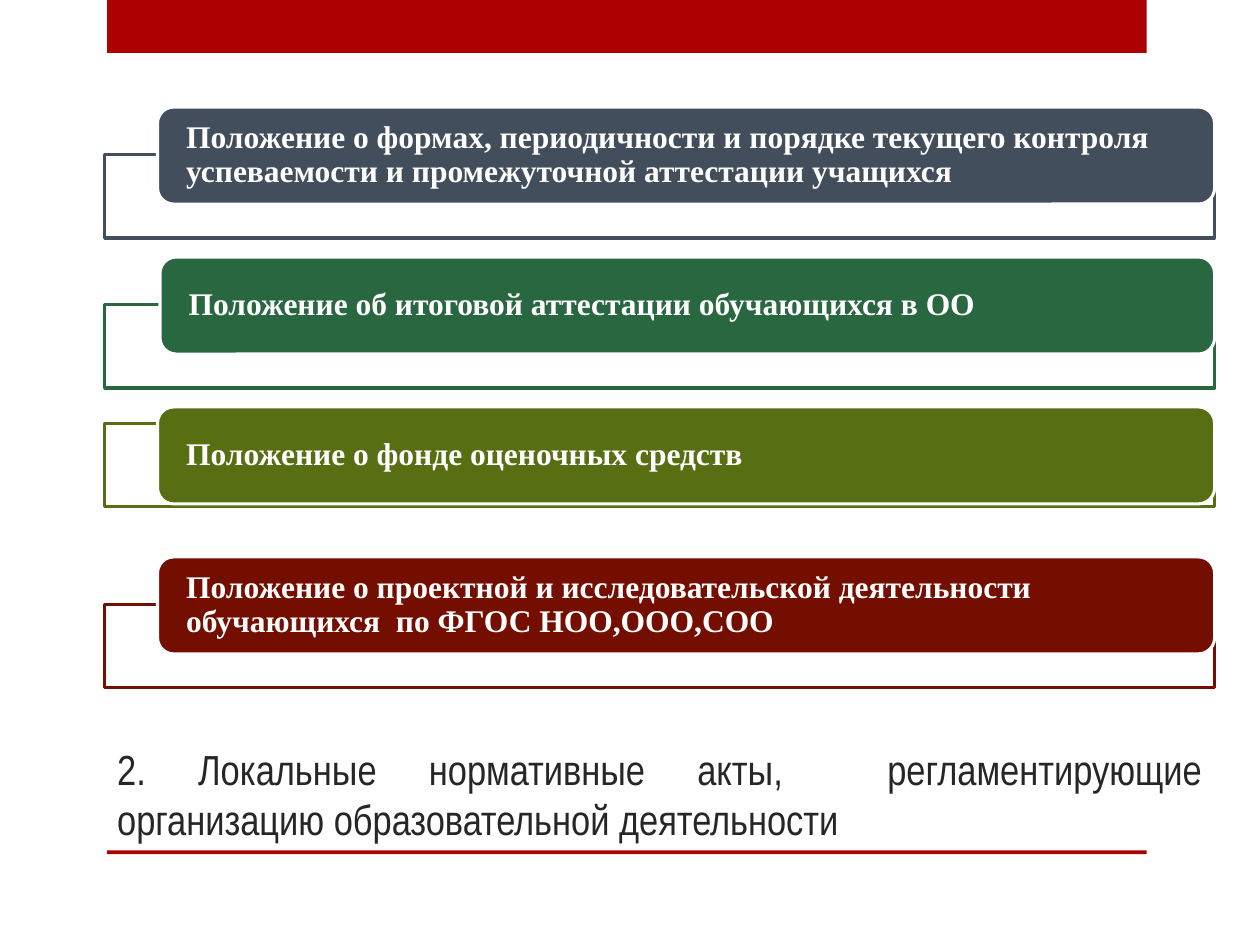
from dataclasses import dataclass

from lxml.etree import SubElement
from pptx import Presentation
from pptx.dml.color import RGBColor as Color
from pptx.enum.shapes import MSO_SHAPE as Shape
from pptx.enum.text import MSO_ANCHOR as Anchor, MSO_AUTO_SIZE as AutoSize, PP_ALIGN as Align
from pptx.oxml.ns import qn
from pptx.util import Inches, Pt


@dataclass(frozen=True)
class Theme:
    accent: str = "AD0101"
    paper: str = "FFFFFF"
    ink: str = "262626"
    title_font: str = "Arial Narrow"
    title_size: int = 24
    label_font: str = "Times New Roman"
    label_size: int = 18
    outline: float = 1.75
    cell: float = 0.1


COLUMNS, ROWS = 100, 75
LEFT, WIDTH = 8.3, 88.1
FIRST_ROW, ROW_STEP = 8.5, 11.9
BAR_HEIGHT, FRAME_HEIGHT = 7.7, 6.6
REGULATIONS = [
    ("Положение о формах, периодичности и порядке текущего контроля "
     "успеваемости и промежуточной аттестации учащихся", "424E5B", 12.5, 3.8),
    ("Положение об итоговой аттестации обучающихся в ОО", "286740", 12.7, 3.8),
    ("Положение о фонде оценочных средств", "576F12", 12.5, 1.3),
    ("Положение о проектной и исследовательской деятельности "
     "обучающихся  по ФГОС НОО,ООО,СОО", "730E00", 12.5, 3.8),
]
TITLE = "2. Локальные нормативные акты,  регламентирующие организацию образовательной деятельности"


class SlideBuilder:
    """Draws themed elements on a slide, measured in grid columns and rows."""

    def __init__(self, deck, theme):
        self.theme = theme
        deck.slide_width, deck.slide_height = self.size(COLUMNS), self.size(ROWS)
        self.page = deck.slides.add_slide(deck.slide_layouts[5])

    def size(self, cells):
        return Inches(cells * self.theme.cell)

    def block(self, kind, area, fill, line=None):
        box = self.page.shapes.add_shape(kind, *map(self.size, area))
        box.shadow.inherit = False
        box.fill.solid()
        box.fill.fore_color.rgb = Color.from_string(fill)
        if line:
            box.line.color.rgb = Color.from_string(line)
            box.line.width = Pt(self.theme.outline)
        else:
            box.line.fill.background()
        return box

    def add_text(self, box, text, font, size, color, align, bold=False):
        para = box.text_frame.paragraphs[0]
        para.alignment = align
        span = para.add_run()
        span.text = text
        span.font.name, span.font.size, span.font.bold = font, Pt(size), bold
        span.font.color.rgb = Color.from_string(color)
        return para

    def band(self, top, height):
        self.block(Shape.RECTANGLE, (8.5, top, 82.5, height), self.theme.accent)

    def frame(self, top, color):
        area = (LEFT, top, WIDTH, FRAME_HEIGHT)
        box = self.block(Shape.RECTANGLE, area, self.theme.paper, color)
        tint = box.element.spPr.find(qn("a:solidFill"))[0]
        SubElement(tint, qn("a:alpha"), val="90000")

    def label(self, left, top, text, color):
        theme = self.theme
        area = (left, top, LEFT + WIDTH - left, BAR_HEIGHT)
        box = self.block(Shape.ROUNDED_RECTANGLE, area, color, theme.paper)
        frame = box.text_frame
        frame.word_wrap, frame.vertical_anchor = True, Anchor.MIDDLE
        frame.margin_left = frame.margin_right = self.size(1.9)
        frame.margin_top = frame.margin_bottom = 0
        para = self.add_text(box, text, theme.label_font, theme.label_size,
                             theme.paper, Align.LEFT, bold=True)
        para.line_spacing = 0.9

    def title(self, text):
        theme = self.theme
        box = self.page.shapes.title
        box.left, box.top, box.width, box.height = map(self.size, (LEFT, 57.2, WIDTH, 10.3))
        frame = box.text_frame
        frame.word_wrap, frame.vertical_anchor = True, Anchor.BOTTOM
        frame.auto_size = AutoSize.NONE
        self.add_text(box, text, theme.title_font, theme.title_size, theme.ink, Align.JUSTIFY)


def main():
    deck = Presentation()
    builder = SlideBuilder(deck, Theme())
    builder.band(0, 4.2)
    builder.band(67.5, 0.3)
    for index, (text, color, left, drop) in enumerate(REGULATIONS):
        top = FIRST_ROW + index * ROW_STEP
        builder.frame(top + drop, color)
        builder.label(left, top, text, color)
    builder.title(TITLE)
    deck.save("out.pptx")


if __name__ == "__main__":
    main()
